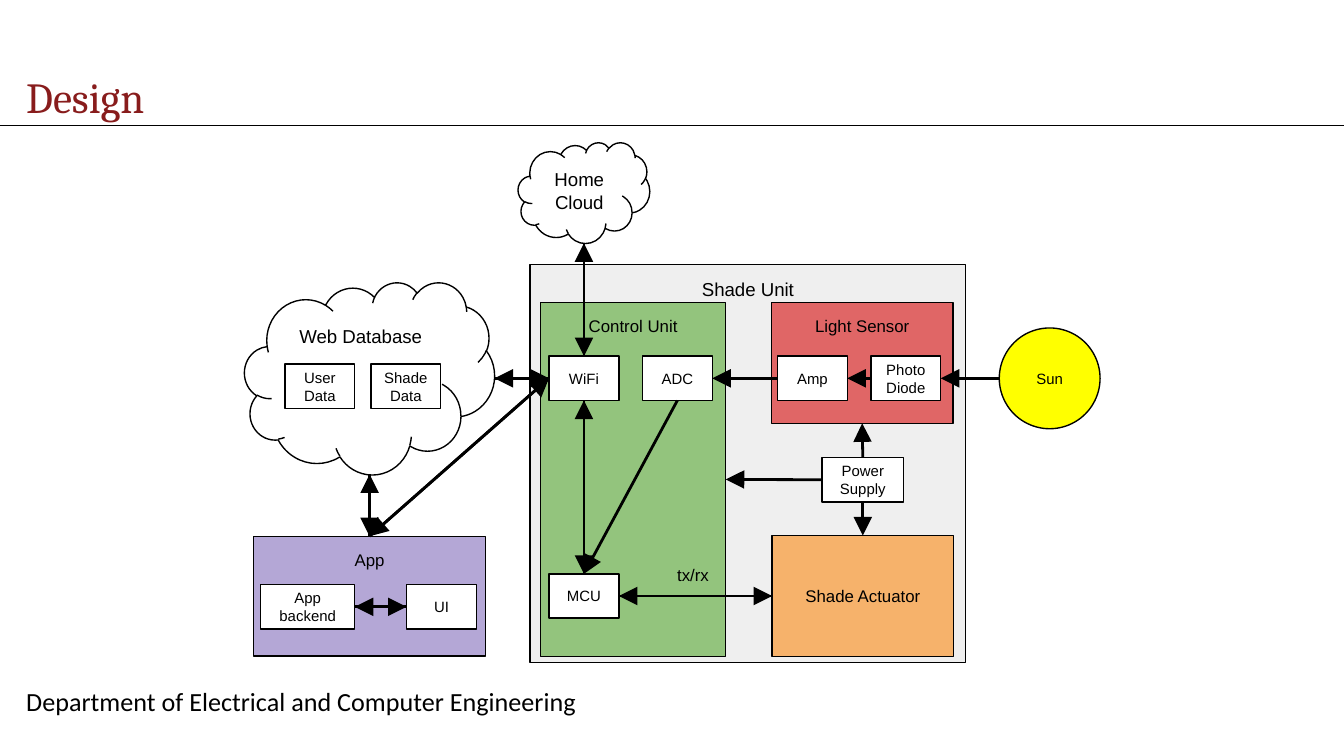
"""Builds the Design slide: a block diagram of a networked window shade."""
from lxml.etree import SubElement
from pptx import Presentation
from pptx.dml.color import RGBColor
from pptx.enum.shapes import MSO_CONNECTOR, MSO_SHAPE
from pptx.enum.text import MSO_ANCHOR, PP_ALIGN
from pptx.oxml.ns import qn
from pptx.util import Inches, Pt

BLACK = RGBColor(0x00, 0x00, 0x00)
WHITE = RGBColor(0xFF, 0xFF, 0xFF)
MAROON = RGBColor(0x88, 0x1C, 0x1C)
GRAY = RGBColor(0xEF, 0xEF, 0xEF)
GREEN = RGBColor(0x93, 0xC4, 0x7D)
RED = RGBColor(0xE0, 0x66, 0x66)
ORANGE = RGBColor(0xF6, 0xB2, 0x6B)
YELLOW = RGBColor(0xFF, 0xFF, 0x00)
PURPLE = RGBColor(0xB4, 0xA7, 0xD6)

SLIDE_WIDTH = Inches(10)
SLIDE_HEIGHT = SLIDE_WIDTH * 9 // 16
UNIT = SLIDE_WIDTH / 100
RULE_ROW = 9.33
CHIP_WIDTH, CHIP_HEIGHT = 5.2, 3.3
SENSE_ROW, DATA_ROW, APP_ROW = 26.5, 27.1, 43.5
WIFI_COLUMN = 40.85

CAPTIONS = [
    ("Design", (1.25, 4.85, 72.5, 4.5), "Cambria", 23, MAROON, (0.07, 0.04)),
    ("Department of Electrical and Computer Engineering",
     (1.25, 50.6, 46.1, 3), "Calibri", 14, BLACK, (0.07, 0.04)),
    ("tx/rx", (49.4, 41.3, 6.1, 3.3), "Arial", 9, BLACK, (0.1, 0.1)),
]

CLOUD, BOX, DISC = MSO_SHAPE.CLOUD, MSO_SHAPE.RECTANGLE, MSO_SHAPE.OVAL
TOP, MIDDLE = MSO_ANCHOR.TOP, MSO_ANCHOR.MIDDLE
BLOCKS = {
    "database": ("Web Database", CLOUD, (18.2, 21, 18.6, 14.3), WHITE, 10, TOP),
    "unit": ("Shade Unit", BOX, (39.45, 19.7, 32.4, 29.6), GRAY, 10, TOP),
    "control": ("Control Unit", BOX, (40.2, 22.5, 13.8, 26.35), GREEN, 9, TOP),
    "sensor": ("Light Sensor", BOX, (57.4, 22.5, 13.5, 9), RED, 9, TOP),
    "actuator": ("Shade Actuator", BOX, (57.45, 39.85, 13.5, 9), ORANGE, 9, MIDDLE),
    "sun": ("Sun", DISC, (74.35, 24.4, 7.5, 7.5), YELLOW, 8, MIDDLE),
    "app": ("App", BOX, (18.85, 39.9, 17.3, 8.9), PURPLE, 9, TOP),
    "home": ("Home Cloud", CLOUD, (38.55, 10.6, 9.8, 7.5), WHITE, 10, MIDDLE),
}

CHIPS = {
    "wifi": ("WiFi", WIFI_COLUMN, SENSE_ROW, CHIP_WIDTH),
    "adc": ("ADC", 47.8, SENSE_ROW, CHIP_WIDTH),
    "amp": ("Amp", 57.85, SENSE_ROW, CHIP_WIDTH),
    "diode": ("Photo\nDiode", 64.8, SENSE_ROW, CHIP_WIDTH),
    "mcu": ("MCU", WIFI_COLUMN, 42.7, CHIP_WIDTH),
    "power": ("Power Supply", 61.15, 34.05, 6.1),
    "user": ("User Data", 21.2, DATA_ROW, CHIP_WIDTH),
    "shade": ("Shade Data", 27.6, DATA_ROW, CHIP_WIDTH),
    "backend": ("App backend", 19.4, APP_ROW, 7),
    "ui": ("UI", 30.25, APP_ROW, CHIP_WIDTH),
}

ONE_WAY = [
    ("sun", "left", "diode", "right"),
    ("diode", "left", "amp", "right"),
    ("amp", "left", "adc", "right"),
    ("adc", "bottom", "mcu", "top"),
    ("power", "left", "control", "right"),
    ("power", "top", "sensor", "bottom"),
    ("power", "bottom", "actuator", "top"),
]
TWO_WAY = [
    ("mcu", "right", "actuator", "left"),
    ("wifi", "bottom", "mcu", "top"),
    ("home", "bottom", "wifi", "top"),
    ("database", "right", "wifi", "left"),
    ("database", "bottom", "app", "top"),
    ("app", "top", "wifi", "left"),
    ("backend", "right", "ui", "left"),
]
SIDES = {"top": (0.5, 0), "bottom": (0.5, 1), "left": (0, 0.5), "right": (1, 0.5)}


def units(values):
    return [round(value * UNIT) for value in values]


def write(shape, wording, font, size, color, insets, align, anchor):
    frame = shape.text_frame
    frame.word_wrap = True
    frame.margin_left = frame.margin_right = Inches(insets[0])
    frame.margin_top = frame.margin_bottom = Inches(insets[1])
    frame.vertical_anchor = anchor
    frame.text = wording
    for paragraph in frame.paragraphs:
        paragraph.alignment = align
        for run in paragraph.runs:
            run.font.name, run.font.size = font, Pt(size)
            run.font.color.rgb = color


def add_block(slide, wording, kind, place, fill, size, anchor):
    block = slide.shapes.add_shape(kind, *units(place))
    block.shadow.inherit = False
    block.fill.solid()
    block.fill.fore_color.rgb = fill
    block.line.color.rgb = BLACK
    block.line.width = Pt(0.75)
    write(block, wording, "Arial", size, BLACK, (0.1, 0.1), PP_ALIGN.CENTER, anchor)
    return block


def add_line(slide, start, end, width):
    line = slide.shapes.add_connector(MSO_CONNECTOR.STRAIGHT, *start, *end)
    line.line.color.rgb = BLACK
    line.line.width = Pt(width)
    SubElement(line._element.spPr, qn("a:effectLst"))
    return line


def add_arrow(slide, start, end):
    arrow = add_line(slide, start, end, 1.5)
    SubElement(arrow.line._get_or_add_ln(), qn("a:tailEnd"),
               type="triangle", w="lg", len="lg")


def anchor_point(block, side):
    across, down = SIDES[side]
    return (round(block.left + across * block.width),
            round(block.top + down * block.height))


def main():
    deck = Presentation()
    deck.slide_width, deck.slide_height = SLIDE_WIDTH, SLIDE_HEIGHT
    slide = deck.slides.add_slide(deck.slide_layouts[6])

    add_line(slide, units((0, RULE_ROW)), units((100, RULE_ROW)), 0.75)
    blocks = {key: add_block(slide, *block) for key, block in BLOCKS.items()}
    for key, (wording, column, row, width) in CHIPS.items():
        place = (column, row, width, CHIP_HEIGHT)
        blocks[key] = add_block(slide, wording, BOX, place, WHITE, 8, MIDDLE)

    returns = [(target, target_side, source, source_side)
               for source, source_side, target, target_side in TWO_WAY]
    for source, source_side, target, target_side in ONE_WAY + TWO_WAY + returns:
        add_arrow(slide, anchor_point(blocks[source], source_side),
                  anchor_point(blocks[target], target_side))

    for wording, place, font, size, color, insets in CAPTIONS:
        caption = slide.shapes.add_textbox(*units(place))
        write(caption, wording, font, size, color, insets, PP_ALIGN.LEFT, TOP)

    deck.save("out.pptx")


if __name__ == "__main__":
    main()
